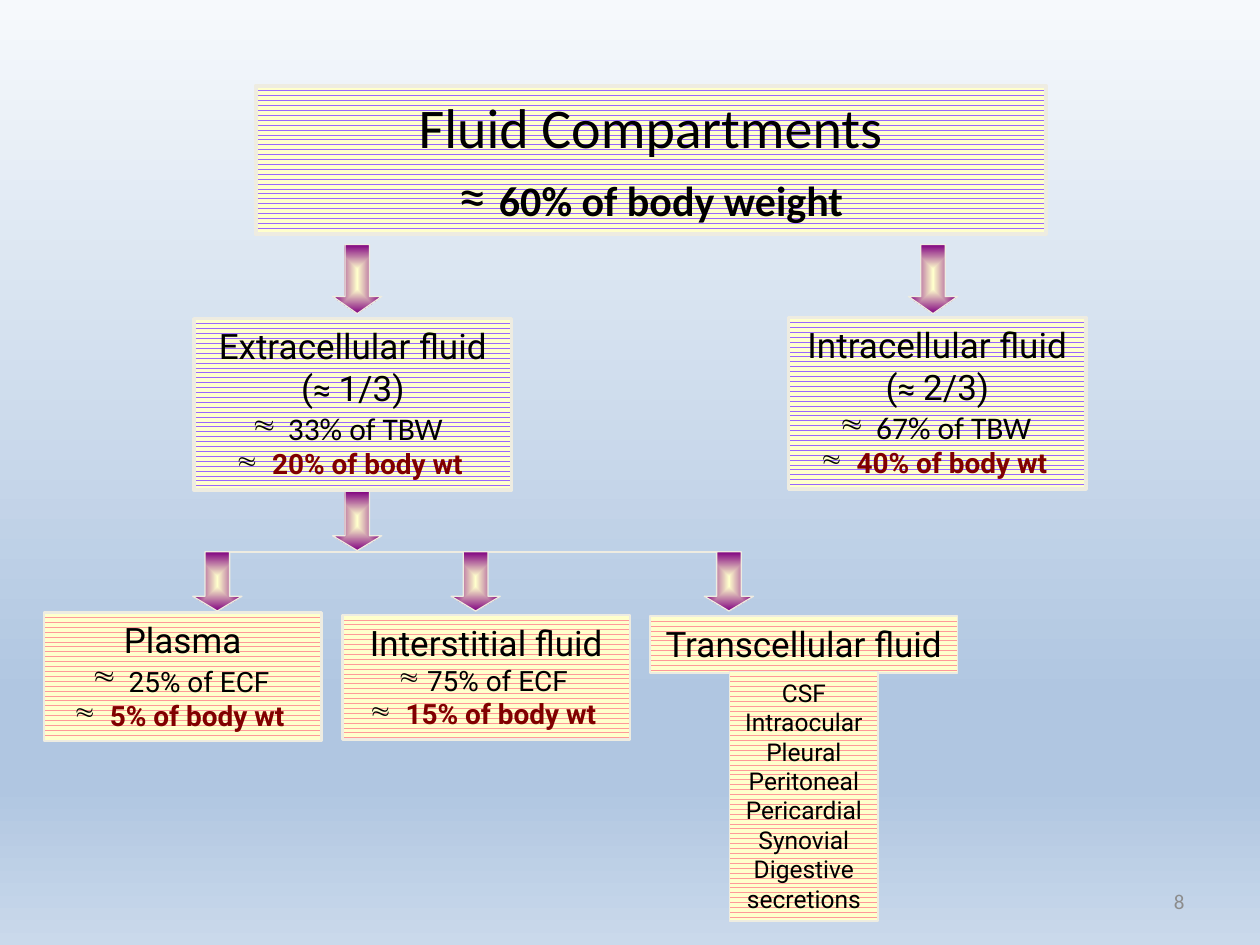
import pptx
import pptx.util
from lxml import etree
from pptx.dml.color import RGBColor
from pptx.enum.dml import MSO_PATTERN
from pptx.enum.shapes import MSO_CONNECTOR, MSO_SHAPE
from pptx.enum.text import MSO_ANCHOR, MSO_AUTO_SIZE, PP_ALIGN
from pptx.oxml.ns import qn

WIDTH, HEIGHT = pptx.util.Inches(10), pptx.util.Inches(7.5)
BLACK = RGBColor(0x00, 0x00, 0x00)
MAROON = RGBColor(0x80, 0x00, 0x00)
PURPLE = RGBColor(0x80, 0x00, 0x80)
VIOLET = RGBColor(0x99, 0x66, 0xFF)
PINK = RGBColor(0xFF, 0x99, 0x99)
CREAM = RGBColor(0xFF, 0xFF, 0xCC)
TAN = RGBColor(0xEE, 0xEC, 0xE1)
GRAY = RGBColor(0x8C, 0x8C, 0x8C)
SKY = [(0, RGBColor(0xF6, 0xF9, 0xFC)), (74, RGBColor(0xB0, 0xC6, 0xE1)),
       (83, RGBColor(0xB0, 0xC6, 0xE1)), (100, RGBColor(0xCA, 0xD9, 0xEB))]
GLOW = [(0, CREAM), (100, PURPLE)]


def area(x, y, w, h):
    """Turn percentages of the slide's width and height into lengths."""
    return [int(share * side / 100)
            for share, side in zip((x, y, w, h), (WIDTH, HEIGHT) * 2)]


def set_gradient(fill, parent, stops, centered=False):
    """Fill with a top-down gradient, or one that spreads from the centre."""
    fill.solid()
    solid = parent.find(qn("a:solidFill"))
    grad = etree.Element(qn("a:gradFill"), rotWithShape="1")
    stop_list = etree.SubElement(grad, qn("a:gsLst"))
    for pos, color in stops:
        stop = etree.SubElement(stop_list, qn("a:gs"), pos=str(pos * 1000))
        etree.SubElement(stop, qn("a:srgbClr"), val=str(color))
    if centered:
        spread = etree.SubElement(grad, qn("a:path"), path="rect")
        etree.SubElement(spread, qn("a:fillToRect"),
                         dict.fromkeys("ltrb", "50000"))
    else:
        etree.SubElement(grad, qn("a:lin"), ang="5400000", scaled="0")
    parent.replace(solid, grad)


def add_text(p, text, size=20, font="Roboto", color=BLACK, bold=False):
    r = p.add_run()
    r.text = text
    r.font.size = pptx.util.Pt(size)
    r.font.name = font
    r.font.color.rgb = color
    r.font.bold = bold


def add_paragraph(tf, *runs, bullet=False, align=PP_ALIGN.CENTER):
    """Add a line made of (text, format) pairs."""
    p = tf.paragraphs[0]
    if p.runs:
        p = tf.add_paragraph()
    if bullet:
        etree.SubElement(p._p.get_or_add_pPr(), qn("a:buChar"), char="≈")
    p.alignment = align
    for text, fmt in runs:
        add_text(p, text, **fmt)
    return p


def add_box(s, place, ink, line_width):
    """Add a patterned box and return its text frame."""
    sp = s.shapes.add_shape(MSO_SHAPE.RECTANGLE, *area(*place))
    sp.shadow.inherit = False
    sp.fill.patterned()
    sp.fill.pattern = MSO_PATTERN.WAVE
    sp.fill.fore_color.rgb = ink
    sp.fill.back_color.rgb = CREAM
    sp.line.color.rgb = TAN
    sp.line.width = pptx.util.Pt(line_width)
    tf = sp.text_frame
    tf.word_wrap = True
    tf.vertical_anchor = MSO_ANCHOR.TOP
    tf.auto_size = MSO_AUTO_SIZE.SHAPE_TO_FIT_TEXT
    return tf


def add_compartment(s, place, ink, line_width, name, share, weight,
                    fraction=None):
    """Add a box with a name, an optional fraction and two bulleted shares."""
    tf = add_box(s, place, ink, line_width)
    add_paragraph(tf, (name, {}))
    if fraction:
        add_paragraph(tf, ("(", {}), ("≈ ", {"size": 18}), (fraction + ")", {}))
    add_paragraph(tf, *share, bullet=True)
    add_paragraph(tf, (" ", {"size": 16}),
                  (weight, {"size": 16, "color": MAROON, "bold": True}),
                  bullet=True)


def add_arrow(s, x, y, h, head):
    sp = s.shapes.add_shape(MSO_SHAPE.DOWN_ARROW, *area(x, y, 3.9, h))
    sp.shadow.inherit = False
    sp.adjustments[0], sp.adjustments[1] = 0.5, head
    set_gradient(sp.fill, sp._element.spPr, GLOW, centered=True)
    sp.line.color.rgb = TAN
    sp.line.width = pptx.util.Pt(0.75)


def add_branch_line(s, x1, x2, y):
    left, top, right, bottom = area(x1, y, x2, y)
    line = s.shapes.add_connector(MSO_CONNECTOR.STRAIGHT,
                                  left, top, right, bottom)
    line.line.color.rgb = TAN
    line.line.width = pptx.util.Pt(1.5)
    etree.SubElement(line._element.spPr, qn("a:effectLst"))


def add_title(s):
    tf = add_box(s, (20.3, 9.07, 62.7, 15.73), VIOLET, 2.25)
    tf.auto_size = MSO_AUTO_SIZE.NONE
    tf.vertical_anchor = MSO_ANCHOR.MIDDLE
    big = {"size": 32, "font": "Calibri"}
    p = add_paragraph(tf, ("Fluid Compartments", big))
    p.add_line_break()
    add_text(p, "≈ ", **big)
    add_text(p, "60% of body weight", size=24, font="Calibri", bold=True)


def add_transcellular(s):
    tf = add_box(s, (51.6, 65.2, 24.4, 6), PINK, 1)
    add_paragraph(tf, ("Transcellular fluid", {}))
    tf = add_box(s, (57.9, 71.07, 11.8, 26.4), PINK, 1)
    for item in ("CSF", "Intraocular", "Pleural", "Peritoneal", "Pericardial",
                 "Synovial", "Digestive secretions"):
        add_paragraph(tf, (item, {"size": 14}))


def add_slide_number(s):
    tf = s.shapes.add_textbox(*area(71.7, 92.67, 23.3, 5.33)).text_frame
    tf.word_wrap = True
    tf.vertical_anchor = MSO_ANCHOR.MIDDLE
    add_paragraph(tf, ("8", {"size": 12, "font": "Calibri", "color": GRAY}),
                  align=PP_ALIGN.RIGHT)


def main():
    prs = pptx.Presentation()
    prs.slide_width, prs.slide_height = WIDTH, HEIGHT
    s = prs.slides.add_slide(prs.slide_layouts[6])
    fill = s.background.fill
    set_gradient(fill, s._element.find(".//" + qn("p:bgPr")), SKY)

    small, medium = {"size": 16}, {"size": 18}
    calibri = {"size": 18, "font": "Calibri"}
    add_title(s)
    add_compartment(s, (15.4, 33.73, 25.2, 18.13), VIOLET, 2,
                    "Extracellular fluid",
                    [(" 33% of TBW", calibri), (" ", small)],
                    "20% of body wt", fraction="1/3")
    add_compartment(s, (62.6, 33.6, 23.6, 18.13), VIOLET, 2,
                    "Intracellular fluid",
                    [(" ", medium), ("67% of TBW", calibri)],
                    "40% of body wt", fraction="2/3")
    add_compartment(s, (27.2, 65.07, 22.8, 13.2), PINK, 1.5,
                    "Interstitial fluid", [("75% of ECF", small)],
                    "15% of body wt")
    add_compartment(s, (3.5, 64.8, 22, 13.6), PINK, 1.5,
                    "Plasma", [(" ", medium), ("25% of ECF", small)],
                    "5% of body wt")
    add_branch_line(s, 16.3, 58.8, 58.4)
    add_transcellular(s)
    for x in (26.4, 72.1):
        add_arrow(s, x, 25.87, 7.33, 0.35)
    add_arrow(s, 26.4, 52, 6.27, 0.3)
    for x in (15.3, 35.8, 55.9):
        add_arrow(s, x, 58.4, 6.27, 0.3)
    add_slide_number(s)
    prs.save("out.pptx")


if __name__ == "__main__":
    main()
